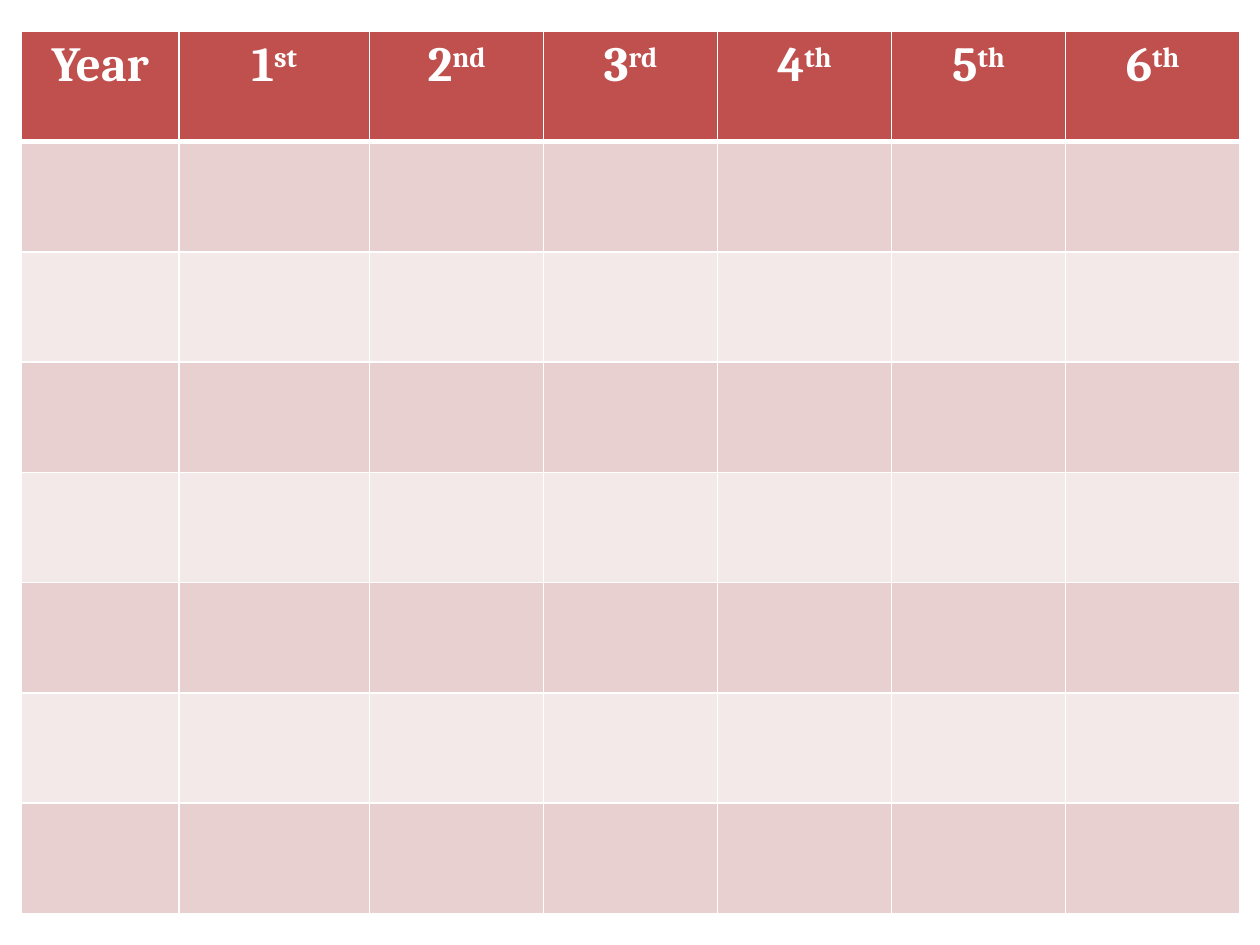
from lxml import etree
from pptx import Presentation, util as u
from pptx.dml.color import RGBColor
from pptx.enum import text
from pptx.oxml.ns import qn

WHITE = RGBColor(0xFF, 0xFF, 0xFF)
HEADER_RED = RGBColor(0xC0, 0x50, 0x4D)
BANDS = (RGBColor(0xE8, 0xD0, 0xD0), RGBColor(0xF4, 0xE9, 0xE9))

HEADINGS = [("Year", ""), ("1", "st"), ("2", "nd"), ("3", "rd"),
            ("4", "th"), ("5", "th"), ("6", "th")]
COLUMN_WIDTHS = [1.25, 1.51] + [1.38] * 5
ROW_COUNT = 8
HEADING_FONT = {"name": "Cambria", "size": u.Pt(28), "bold": True}


def add_borders(cell, widths):
    """Draw white cell borders; widths maps an edge tag to points."""
    properties = cell._tc.get_or_add_tcPr()
    for edge, points in widths.items():
        line = etree.SubElement(properties, qn(f"a:{edge}"), w=str(u.Pt(points)))
        fill = etree.SubElement(line, qn("a:solidFill"))
        etree.SubElement(fill, qn("a:srgbClr"), val=str(WHITE))


def write_heading(cell, base, suffix):
    """Write a centred heading with a raised ordinal suffix."""
    paragraph = cell.text_frame.paragraphs[0]
    paragraph.alignment = text.PP_ALIGN.CENTER
    for part, raise_by in ((base, None), (suffix, "30000")):
        if not part:
            continue
        run = paragraph.add_run()
        run.text = part
        for attribute, value in HEADING_FONT.items():
            setattr(run.font, attribute, value)
        run.font.color.rgb = WHITE
        if raise_by:
            run.font._element.set("baseline", raise_by)


def add_year_grid(slide, left, top, width, height):
    """Fill the given box with the banded year table."""
    grid = slide.shapes.add_table(ROW_COUNT, len(HEADINGS),
                                  left, top, width, height).table
    for column, share in zip(grid.columns, COLUMN_WIDTHS):
        column.width = int(width * share / sum(COLUMN_WIDTHS))

    for row_index, row in enumerate(grid.rows):
        row.height = int(height / ROW_COUNT)
        is_header = row_index == 0
        color = HEADER_RED if is_header else BANDS[(row_index - 1) % 2]
        # A thick rule separates the header from the body
        edges = {"lnL": 1, "lnR": 1, "lnT": 3 if row_index == 1 else 1,
                 "lnB": 3 if is_header else 1}
        for cell in row.cells:
            add_borders(cell, edges)
            cell.fill.solid()
            cell.fill.fore_color.rgb = color

    for cell, (base, suffix) in zip(grid.rows[0].cells, HEADINGS):
        write_heading(cell, base, suffix)


def main():
    deck = Presentation()
    deck.slide_width, deck.slide_height = u.Inches(10), u.Inches(7.5)
    slide = deck.slides.add_slide(deck.slide_layouts[6])
    add_year_grid(slide, u.Inches(0.17), u.Inches(0.25),
                  u.Inches(9.67), u.Inches(7))
    deck.save("out.pptx")


if __name__ == "__main__":
    main()
